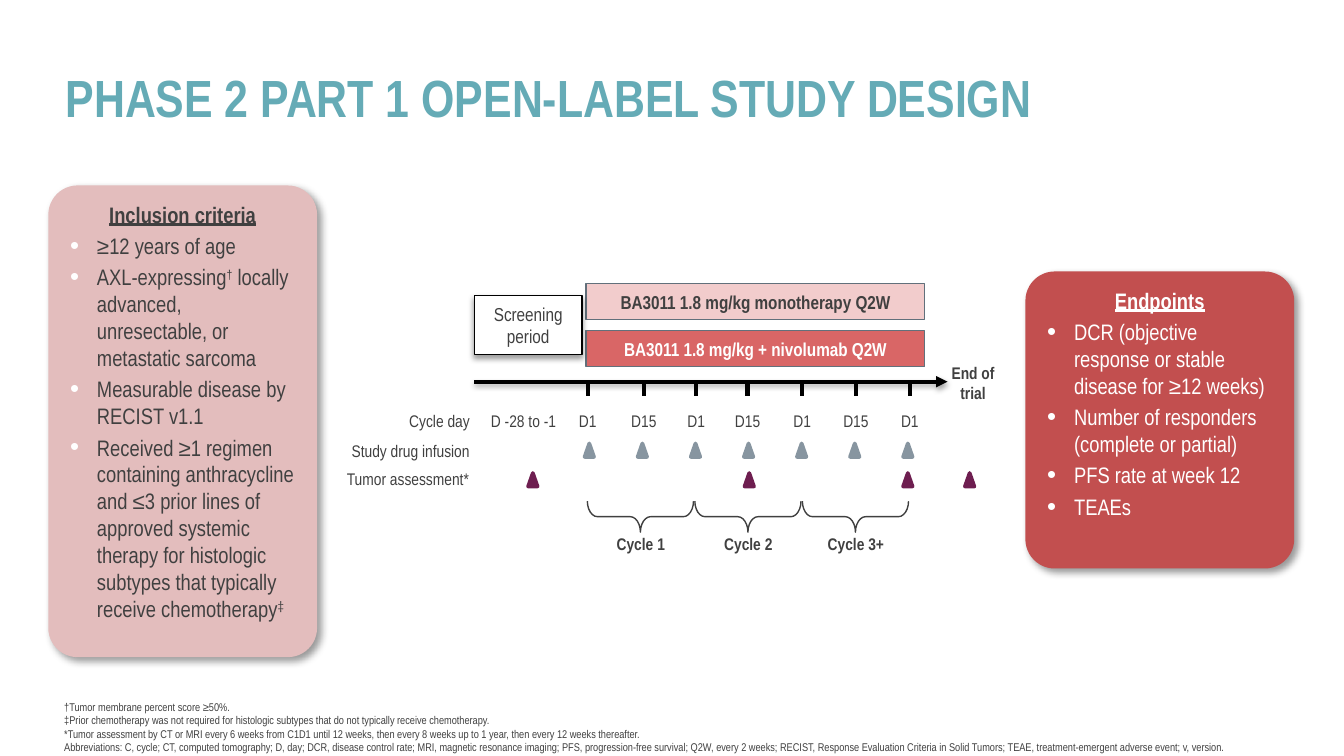
from lxml.etree import SubElement
from pptx import Presentation
from pptx.dml.color import RGBColor
from pptx.enum.shapes import MSO_CONNECTOR, MSO_SHAPE
from pptx.enum.text import MSO_ANCHOR, MSO_AUTO_SIZE, PP_ALIGN
from pptx.oxml.ns import qn
from pptx.util import Pt

WHITE = RGBColor(0xFF, 0xFF, 0xFF)
BLACK = RGBColor(0x00, 0x00, 0x00)
DARK = RGBColor(0x40, 0x40, 0x40)
TEAL = RGBColor(0x65, 0xAB, 0xB6)
PINK = RGBColor(0xE3, 0xBD, 0xBD)
BRICK = RGBColor(0xC2, 0x4F, 0x4F)
RED = RGBColor(0xC0, 0x00, 0x00)
SLATE = RGBColor(0x62, 0x70, 0x7B)
GREY = RGBColor(0x87, 0x95, 0xA0)
PLUM = RGBColor(0x6E, 0x1E, 0x50)

PANEL_SHADOW = {"opacity": 40, "blur": 4, "distance": 3, "angle": 45}
SMALL_SHADOW = {"opacity": 38, "blur": 3.1, "distance": 1.6, "angle": 90}


class StudySlide:
    font_name = "Arial Narrow"

    def __init__(self, slide):
        self.shapes = slide.shapes

    def style(self, target, values):
        for name, value in values.items():
            setattr(target, name, value)

    def add_spans(self, para, spans, size, color, **font_values):
        """Fill a paragraph from a text or a list of (text, format) spans."""
        if isinstance(spans, str):
            spans = [(spans, {})]
        for text, extra in spans:
            span = para.add_run()
            span.text = text
            values = {"name": self.font_name, "size": Pt(size), **font_values, **extra}
            raised = values.pop("raised", False)
            self.style(span.font, values)
            span.font.color.rgb = color
            if raised:
                span.font._element.set("baseline", "30000")

    def bullet(self, para):
        properties = para._p.get_or_add_pPr()
        properties.set("marL", str(Pt(14.4)))
        properties.set("indent", str(-Pt(14.4)))
        color = SubElement(properties, qn("a:buClr"))
        SubElement(color, qn("a:srgbClr"), val=str(WHITE))
        SubElement(properties, qn("a:buSzPct"), val="115000")
        SubElement(properties, qn("a:buFont"), typeface="Arial")
        SubElement(properties, qn("a:buChar"), char="•")

    def shadow(self, effects, opacity, blur, distance, angle):
        outer = SubElement(effects, qn("a:outerShdw"), blurRad=str(Pt(blur)),
                           dist=str(Pt(distance)), dir=str(angle * 60000),
                           algn="t", rotWithShape="0")
        color = SubElement(outer, qn("a:srgbClr"), val=str(BLACK))
        SubElement(color, qn("a:alpha"), val=str(opacity * 1000))

    def shape(self, kind, left, top, width, height, fill=None, line=None,
              weight=0.75, opacity=None, shadow=None):
        shape = self.shapes.add_shape(kind, Pt(left), Pt(top), Pt(width), Pt(height))
        shape.shadow.inherit = False
        if fill is None:
            shape.fill.background()
        else:
            shape.fill.solid()
            shape.fill.fore_color.rgb = fill
        if opacity:
            color = shape.element.spPr.find(".//" + qn("a:srgbClr"))
            SubElement(color, qn("a:alpha"), val=str(opacity * 1000))
        if line is None:
            shape.line.fill.background()
        else:
            shape.line.color.rgb = line
            shape.line.width = Pt(weight)
        if shadow:
            self.shadow(shape.element.spPr.find(qn("a:effectLst")), **shadow)
        return shape

    def box(self, left, top, width, height, color, text, bold=False, **fill_values):
        box = self.shape(MSO_SHAPE.RECTANGLE, left, top, width, height, **fill_values)
        self.style(box.text_frame, {"word_wrap": True, "vertical_anchor": MSO_ANCHOR.MIDDLE,
                                    "auto_size": MSO_AUTO_SIZE.SHAPE_TO_FIT_TEXT})
        para = box.text_frame.paragraphs[0]
        para.alignment = PP_ALIGN.CENTER
        self.add_spans(para, text, 10, color, bold=bold)

    def panel(self, left, top, width, height, fill, color, heading, items):
        panel = self.shape(MSO_SHAPE.ROUNDED_RECTANGLE, left, top, width, height,
                           fill, shadow=PANEL_SHADOW)
        panel.adjustments[0] = 0.109
        frame = panel.text_frame
        self.style(frame, {"word_wrap": True, "vertical_anchor": MSO_ANCHOR.TOP})
        para = frame.paragraphs[0]
        para.alignment = PP_ALIGN.CENTER
        self.add_spans(para, heading, 12, color, bold=True, underline=True)
        for item in items:
            para = frame.add_paragraph()
            self.bullet(para)
            self.style(para, {"alignment": PP_ALIGN.LEFT, "space_before": Pt(2.4)})
            self.add_spans(para, item, 12, color)

    def text(self, left, top, width, height, lines, size=9, color=DARK, bold=False,
             wrap=False, align=PP_ALIGN.CENTER, spacing=None, grow=True):
        frame = self.shapes.add_textbox(Pt(left), Pt(top), Pt(width), Pt(height)).text_frame
        fit = MSO_AUTO_SIZE.SHAPE_TO_FIT_TEXT if grow else MSO_AUTO_SIZE.NONE
        self.style(frame, {"word_wrap": wrap, "auto_size": fit})
        for number, line in enumerate(lines):
            para = frame.add_paragraph() if number else frame.paragraphs[0]
            self.style(para, {"alignment": align, "line_spacing": spacing})
            self.add_spans(para, line, size, color, bold=bold)

    def label(self, center, top, width, text, bold=False):
        self.text(center - width / 2, top, width, 18, [text], bold=bold)

    def line(self, start, end, weight, arrow=False, shadow=None):
        line = self.shapes.add_connector(MSO_CONNECTOR.STRAIGHT, *map(Pt, start + end))
        line.line.color.rgb = BLACK
        line.line.width = Pt(weight)
        properties = line.element.spPr
        if arrow:
            SubElement(properties.find(qn("a:ln")), qn("a:tailEnd"), type="triangle")
        effects = SubElement(properties, qn("a:effectLst"))
        if shadow:
            self.shadow(effects, **shadow)

    def marker(self, left, top, color):
        self.shape(MSO_SHAPE.ISOSCELES_TRIANGLE, left, top, 5.04, 7.2, color, color, 2)

    def brace(self, left, top):
        brace = self.shape(MSO_SHAPE.RIGHT_BRACE, left, top, 16.56, 56.88, line=DARK)
        brace.rotation = 90
        brace.adjustments[0] = 0.329


def main():
    deck = Presentation()
    deck.slide_width, deck.slide_height = Pt(720), Pt(405)
    page = StudySlide(deck.slides.add_slide(deck.slide_layouts[6]))

    # Title
    page.text(28.08, 38.16, 662.4, 33.84, ["PHASE 2 PART 1 OPEN-LABEL STUDY DESIGN"], 28, TEAL,
              bold=True, wrap=True, align=PP_ALIGN.LEFT, spacing=0.8, grow=False)

    # Side panels
    page.panel(25.92, 99.36, 144, 252.72, PINK, DARK, "Inclusion criteria", [
        "≥12 years of age",
        [("AXL-expressing", {}), ("†", {"raised": True}),
         (" locally advanced, unresectable, or metastatic sarcoma", {})],
        "Measurable disease by RECIST v1.1",
        [("Received ≥1 regimen containing anthracycline and ≤3 prior lines of approved systemic "
          "therapy for histologic subtypes that typically receive chemotherapy", {}),
         ("‡", {"raised": True, "name": "Calibri"})],
    ])
    page.panel(549.36, 145.44, 144, 159.12, BRICK, WHITE, "Endpoints", [
        "DCR (objective response or stable disease for ≥12 weeks)",
        "Number of responders (complete or partial)",
        "PFS rate at week 12",
        "TEAEs",
    ])

    # Footnotes
    page.text(27.36, 371.52, 645.12, 36, [
        "†Tumor membrane percent score ≥50%.",
        "‡Prior chemotherapy was not required for histologic subtypes that do not typically "
        "receive chemotherapy.",
        "*Tumor assessment by CT or MRI every 6 weeks from C1D1 until 12 weeks, then every "
        "8 weeks up to 1 year, then every 12 weeks thereafter.",
        "Abbreviations: C, cycle; CT, computed tomography; D, day; DCR, disease control rate; "
        "MRI, magnetic resonance imaging; PFS, progression-free survival; Q2W, every 2 weeks; "
        "RECIST, Response Evaluation Criteria in Solid Tumors; TEAE, treatment-emergent adverse "
        "event; v, version.",
    ], 6, align=PP_ALIGN.LEFT)

    # Screening and treatment arms
    page.box(313.92, 151.92, 181.44, 19.44, DARK, "BA3011 1.8 mg/kg monotherapy Q2W",
             bold=True, fill=RED, line=SLATE, opacity=20)
    page.box(313.92, 177.12, 181.44, 19.44, WHITE, "BA3011 1.8 mg/kg + nivolumab Q2W",
             bold=True, fill=RED, line=SLATE, opacity=60)
    page.box(254.16, 158.4, 57.6, 31.68, DARK, "Screening period",
             fill=WHITE, line=BLACK, shadow=SMALL_SHADOW)

    # Time axis with cycle days
    page.line((254.16, 204.48), (507.6, 204.48), 2, arrow=True, shadow=SMALL_SHADOW)
    page.text(498.96, 190.8, 44.64, 28.8, ["End of trial"], bold=True, wrap=True)
    page.label(280.44, 216.72, 49.68, "D -28 to -1")
    for number, center in enumerate((314.9, 344.9, 373, 400.5, 429.8, 458.5, 487.4)):
        page.line((center, 205.2), (center, 212.4), 2.25)
        day, width = ("D15", 28.08) if number % 2 else ("D1", 24.48)
        page.label(center, 216.72, width, day)

    # Row labels, ending on one right edge
    for text, top, width in (("Cycle day", 216.72, 47.52),
                             ("Study drug infusion", 232.56, 78.48),
                             ("Tumor assessment*", 247.68, 81.36)):
        page.label(259.2 - width / 2, top, width, text)

    # Infusion and assessment markers
    for number in range(7):
        page.marker(313.2 + 28.44 * number, 237.6, GREY)
    for left in (282.96, 398.88, 483.84, 516.96):
        page.marker(left, 253.44, PLUM)

    # Cycles
    for number, (text, width) in enumerate((("Cycle 1", 40.32), ("Cycle 2", 40.32),
                                            ("Cycle 3+", 44.64))):
        page.brace(334.8 + 57.6 * number, 248.4)
        page.label(343.3 + 57.6 * number, 282.24, width, text, bold=True)

    deck.save("out.pptx")


if __name__ == "__main__":
    main()
